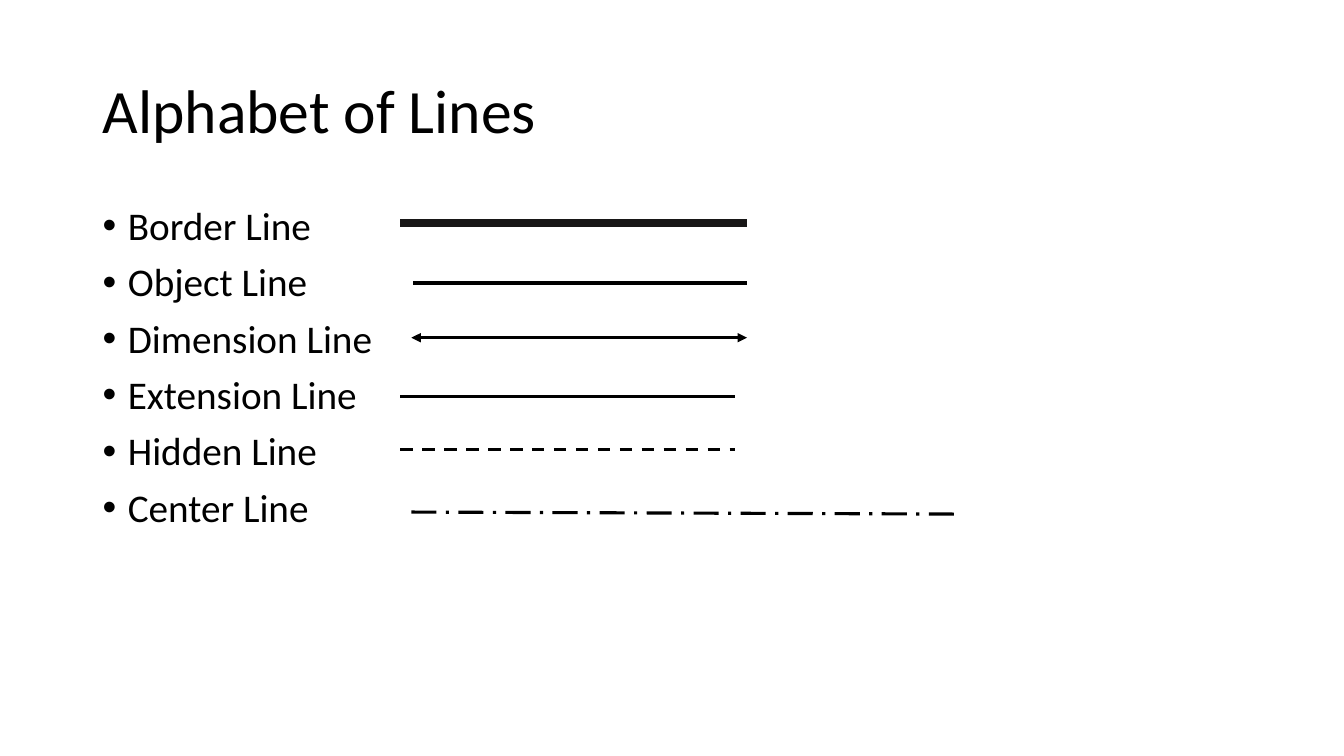
from pptx import Presentation
from pptx.dml.color import RGBColor
from pptx.enum.dml import MSO_LINE_DASH_STYLE as Dash
from pptx.enum.shapes import MSO_CONNECTOR as Connector
from pptx.enum.text import MSO_ANCHOR as Anchor
from pptx.oxml.ns import qn
from pptx.util import Inches, Pt
from lxml.etree import SubElement

COLORS = {"ink": "000000", "border": "181717"}
LINE_NAMES = ["Border Line", "Object Line", "Dimension Line",
              "Extension Line", "Hidden Line", "Center Line"]


class SlideBuilder:
    font_name = "Calibri"

    def __init__(self, deck):
        self.slide = deck.slides.add_slide(deck.slide_layouts[6])

    def text(self, left, top, width, height, lines, size,
             anchor=Anchor.TOP, bulleted=False):
        box = self.slide.shapes.add_textbox(
            Inches(left), Inches(top), Inches(width), Inches(height))
        frame = box.text_frame
        frame.word_wrap = True
        frame.vertical_anchor = anchor
        frame.text = "\n".join(lines)
        for para in frame.paragraphs:
            para.line_spacing = 0.9
            para.font.name = self.font_name
            para.font.size = Pt(size)
            para.font.color.rgb = RGBColor.from_string(COLORS["ink"])
            if bulleted:
                para.space_before = Pt(10)
                self.bullet(para)

    def bullet(self, para):
        properties = para._p.get_or_add_pPr()
        properties.set("marL", str(Inches(0.25)))
        properties.set("indent", str(-Inches(0.25)))
        SubElement(properties, qn("a:buFont"), typeface="Arial")
        SubElement(properties, qn("a:buChar"), char="•")

    def line(self, start, end, weight=2.25, color="ink", dash=None, arrows=False):
        connector = self.slide.shapes.add_connector(
            Connector.STRAIGHT, *(Inches(value) for value in start + end))
        connector.line.width = Pt(weight)
        connector.line.color.rgb = RGBColor.from_string(COLORS[color])
        if dash:
            connector.line.dash_style = dash
        if arrows:
            outline = connector.line._get_or_add_ln()
            for tag in ("a:headEnd", "a:tailEnd"):
                SubElement(outline, qn(tag), type="triangle")
        SubElement(connector._element.spPr, qn("a:effectLst"))


def main():
    deck = Presentation()
    deck.slide_width, deck.slide_height = Inches(13.33), Inches(7.5)
    page = SlideBuilder(deck)
    page.text(0.92, 0.4, 11.5, 1.45, ["Alphabet of Lines"], 44, Anchor.MIDDLE)
    page.text(0.92, 2, 11.5, 4.76, LINE_NAMES, 28, bulleted=True)
    page.line((4.08, 3.35), (7.41, 3.35), arrows=True)
    page.line((4.1, 2.81), (7.41, 2.81), weight=3)
    page.line((3.97, 2.21), (7.41, 2.21), weight=6, color="border")
    page.line((3.97, 3.93), (7.29, 3.93))
    page.line((3.97, 4.46), (7.29, 4.46), dash=Dash.DASH)
    page.line((4.08, 5.08), (9.48, 5.1), dash=Dash.LONG_DASH_DOT)
    deck.save("out.pptx")


if __name__ == "__main__":
    main()
